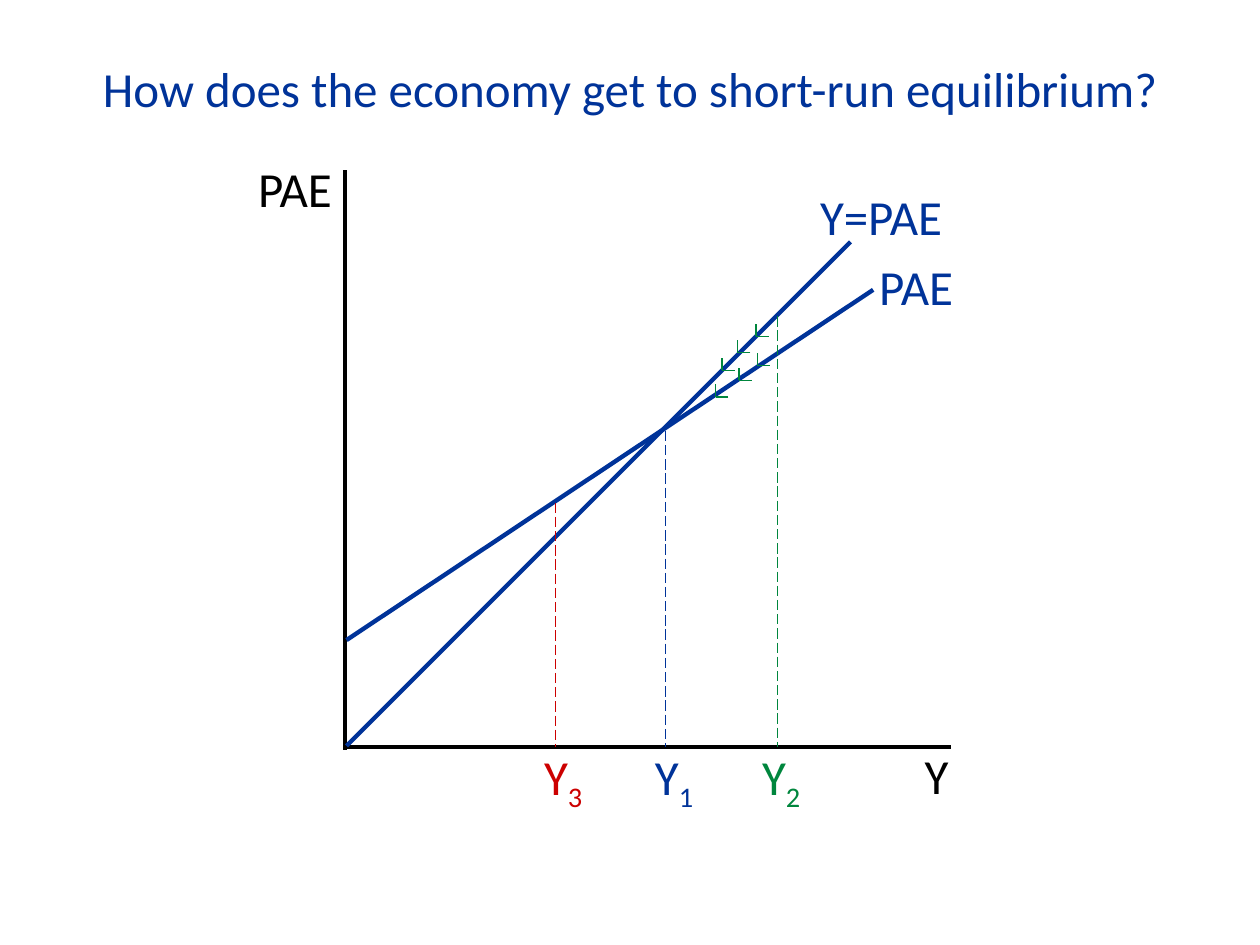
from lxml import etree
from pptx import Presentation
from pptx.dml.color import RGBColor
from pptx.enum.dml import MSO_LINE
from pptx.enum.shapes import MSO_CONNECTOR
from pptx.enum.text import MSO_ANCHOR, PP_ALIGN
from pptx.oxml.ns import qn
from pptx.util import Inches, Pt

STRAIGHT = MSO_CONNECTOR.STRAIGHT
LONG_DASH = MSO_LINE.LONG_DASH
MIDDLE = MSO_ANCHOR.MIDDLE
LEFT, CENTER = PP_ALIGN.LEFT, PP_ALIGN.CENTER
BLACK, BLUE, RED, GREEN = "000000", "003399", "CC0000", "00863D"

presentation = Presentation()
presentation.slide_width = Inches(10)
presentation.slide_height = Inches(7.5)
slide = presentation.slides.add_slide(presentation.slide_layouts[6])
COLUMN = presentation.slide_width / 100
ROW = presentation.slide_height / 75


def add_line(start, end, color, width=0.75, dash=None):
    line = slide.shapes.add_connector(
        STRAIGHT,
        round(start[0] * COLUMN), round(start[1] * ROW),
        round(end[0] * COLUMN), round(end[1] * ROW),
    )
    line.line.color.rgb = RGBColor.from_string(color)
    line.line.width = Pt(width)
    line.line.dash_style = dash
    etree.SubElement(line._element.spPr, qn("a:effectLst"))


def add_label(text, left, top, width, color, subscript="", height=5.7, align=LEFT):
    label = slide.shapes.add_textbox(
        round(left * COLUMN), round(top * ROW), round(width * COLUMN), round(height * ROW)
    )
    label.text_frame.word_wrap = True
    label.text_frame.text = text
    paragraph = label.text_frame.paragraphs[0]
    paragraph.alignment = align
    if subscript:
        run = paragraph.add_run()
        run.text = subscript
        run._r.get_or_add_rPr().set("baseline", "-25000")
    for run in paragraph.runs:
        run.font.name = "Calibri"
        run.font.size = Pt(28)
        run.font.color.rgb = RGBColor.from_string(color)
    return label


title = add_label("How does the economy get to short-run equilibrium?", 7, 4.1, 86, BLUE, align=CENTER)
title.text_frame.vertical_anchor = MIDDLE

origin_x, origin_y = 27.5, 59.3
add_line((27.4, 13.5), (27.4, 59.5), BLACK, 2.5)
add_line((origin_x, origin_y), (75.5, origin_y), BLACK, 2.5)
add_line((origin_x, 50.8), (69.3, 23), BLUE, 2.5)
add_line((origin_x, 59.2), (67.5, 19.2), BLUE, 2.5)

add_label("Y", 72.4, 58.7, 4.9, BLACK)
add_label("PAE", 68.8, 19.9, 8.6, BLUE)
add_label("Y=PAE", 64.1, 14.3, 12.5, BLUE)
vertical_axis = add_label("PAE", 19.5, 13, 8.4, BLACK, height=4.9)
vertical_axis.text_frame.paragraphs[0].line_spacing = 0.8

for subscript, x, top, label_left, color in [
    ("1", 52.8, 34.2, 51, BLUE),
    ("3", 44.1, 39.9, 42.2, RED),
    ("2", 61.7, 25.1, 59.5, GREEN),
]:
    add_line((x, top), (x, origin_y), color, dash=LONG_DASH)
    add_label("Y", label_left, 58.75, 6.6, color, subscript)

arrow_size = 1
for x, y in [(56.8, 31.5), (58.65, 30.2), (60.1, 29), (60, 26.7), (58.55, 28), (57.3, 29.4)]:
    add_line((x + arrow_size, y), (x, y), GREEN)
    add_line((x, y), (x, y - arrow_size), GREEN)

presentation.save("out.pptx")
